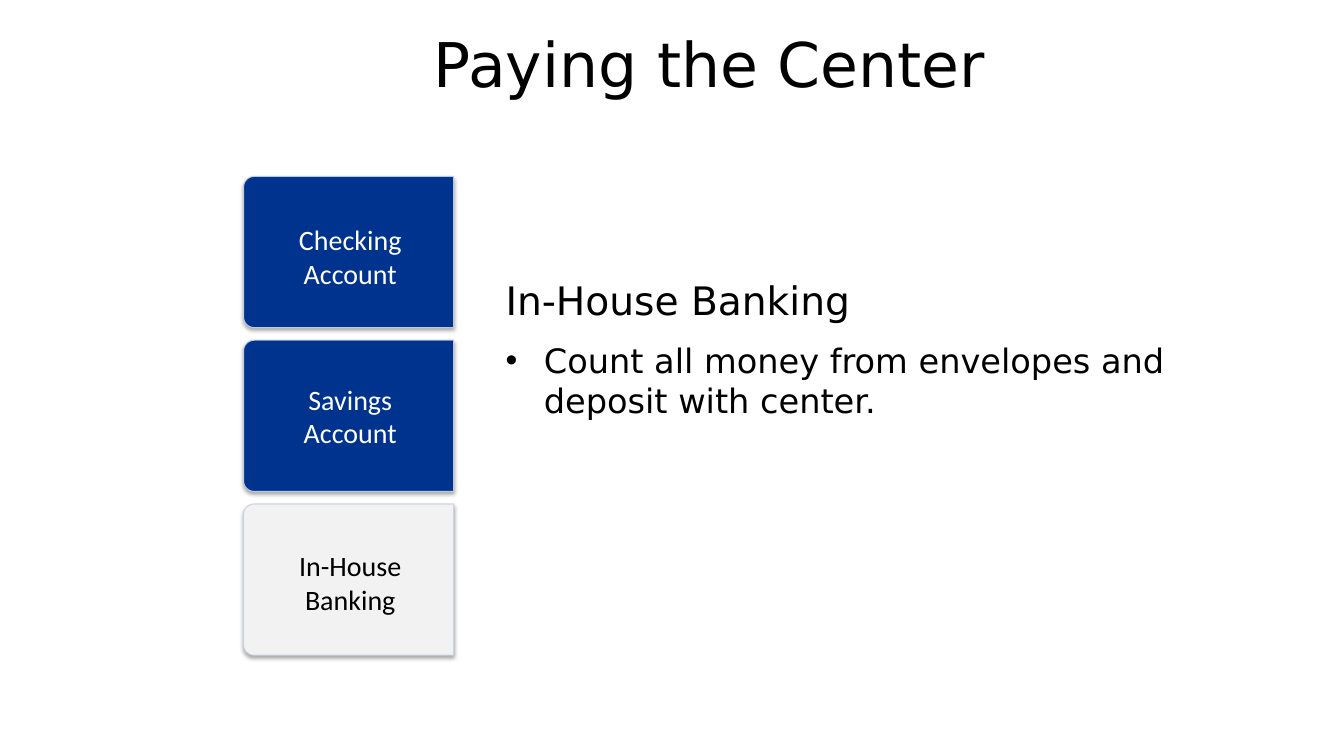
from lxml.etree import SubElement
from pptx import Presentation
from pptx.dml.color import RGBColor
from pptx.enum.shapes import MSO_SHAPE
from pptx.enum.text import MSO_ANCHOR, PP_ALIGN
from pptx.oxml import parse_xml
from pptx.oxml.ns import nsdecls, qn
from pptx.util import Inches, Pt

CELL = Inches(1 / 12)
COLUMNS, ROWS = 160, 90
CARD_LEFT, CARD_TOP, CARD_WIDTH, CARD_HEIGHT, CARD_PITCH = 32.5, 17.5, 18, 25, 19.5
COLORS = {"navy": "00338E", "pale": "F2F2F2", "edge": "CBD3E3",
          "white": "FFFFFF", "black": "000000"}
ACCOUNTS = [
    ("Checking Account", "navy", "white", 24, 13),
    ("Savings Account", "navy", "white", 43, 13),
    ("In-House Banking", "pale", "black", 63, 12.6),
]
TITLE = {"name": "DejaVu Sans", "size": Pt(44)}
LABEL = {"name": "Calibri", "size": Pt(20)}
HEADING = {"name": "DejaVu Sans", "size": Pt(28)}
BODY = {"name": "DejaVu Sans", "size": Pt(24)}
CENTERED = {"alignment": PP_ALIGN.CENTER}


def cells(*counts):
    """Convert counts of grid cells to slide lengths."""
    return [round(count * CELL) for count in counts]


def apply_format(target, values):
    """Set each named attribute on the target."""
    for name, value in values.items():
        setattr(target, name, value)


def add_text_frame(slide, area, anchor):
    """Add a wrapping text box and return its text frame."""
    frame = slide.shapes.add_textbox(*cells(*area)).text_frame
    apply_format(frame, {"word_wrap": True, "vertical_anchor": anchor})
    return frame


def write_paragraph(paragraph, text, font, layout, color="black"):
    """Write one formatted run into a paragraph."""
    apply_format(paragraph, layout)
    run = paragraph.add_run()
    run.text = text
    apply_format(run.font, font)
    run.font.color.rgb = RGBColor.from_string(COLORS[color])


def add_label(slide, text, area, font, color="black"):
    """Add one centred line of text in a box."""
    frame = add_text_frame(slide, area, MSO_ANCHOR.MIDDLE)
    write_paragraph(frame.paragraphs[0], text, font, CENTERED, color)


def add_bullet(paragraph, indent):
    """Give a paragraph a hanging bullet."""
    properties = paragraph._p.get_or_add_pPr()
    properties.set("marL", str(indent))
    properties.set("indent", str(-indent))
    SubElement(properties, qn("a:buFont"), typeface="Arial")
    SubElement(properties, qn("a:buChar"), char="•")


def add_shadow(shape):
    """Add a soft shadow below a shape."""
    shape._element.spPr.append(parse_xml(
        f'<a:effectLst {nsdecls("a")}>'
        f'<a:outerShdw blurRad="{Pt(3.1)}" dist="{Pt(1.8)}" dir="5400000" rotWithShape="0">'
        f'<a:srgbClr val="{COLORS["black"]}"><a:alpha val="35000"/></a:srgbClr>'
        '</a:outerShdw></a:effectLst>'))


def add_card(slide, row, fill):
    """Add one account card, rounded on its left side."""
    area = cells(CARD_LEFT, CARD_TOP + row * CARD_PITCH, CARD_WIDTH, CARD_HEIGHT)
    shape = slide.shapes.add_shape(MSO_SHAPE.ROUND_2_SAME_RECTANGLE, *area)
    shape.rotation = 270
    shape.adjustments[0] = 0.07
    shape.fill.solid()
    shape.fill.fore_color.rgb = RGBColor.from_string(COLORS[fill])
    shape.line.width = Pt(0.75)
    shape.line.color.rgb = RGBColor.from_string(COLORS["edge"])
    edge = shape.line._ln.find(".//" + qn("a:srgbClr"))
    SubElement(edge, qn("a:alpha"), val="90000")
    add_shadow(shape)


def add_details(slide):
    """Add the heading and its bullet."""
    frame = add_text_frame(slide, (59, 32.25, 94, 30.5), MSO_ANCHOR.TOP)
    write_paragraph(frame.paragraphs[0], "In-House Banking", HEADING, {})
    bullet = frame.add_paragraph()
    add_bullet(bullet, Inches(0.38))
    write_paragraph(bullet, "Count all money from envelopes and deposit with center.",
                    BODY, {"space_before": Pt(12)})


def main():
    """Build and save the slide."""
    presentation = Presentation()
    width, height = cells(COLUMNS, ROWS)
    apply_format(presentation, {"slide_width": width, "slide_height": height})
    slide = presentation.slides.add_slide(presentation.slide_layouts[6])
    add_label(slide, "Paying the Center", (29, 0, 111, 15), TITLE)
    for row, (name, fill, color, top, label_height) in enumerate(ACCOUNTS):
        add_card(slide, row, fill)
        add_label(slide, name, (31.2, top, 21, label_height), LABEL, color)
    add_details(slide)
    presentation.save("out.pptx")


if __name__ == "__main__":
    main()
